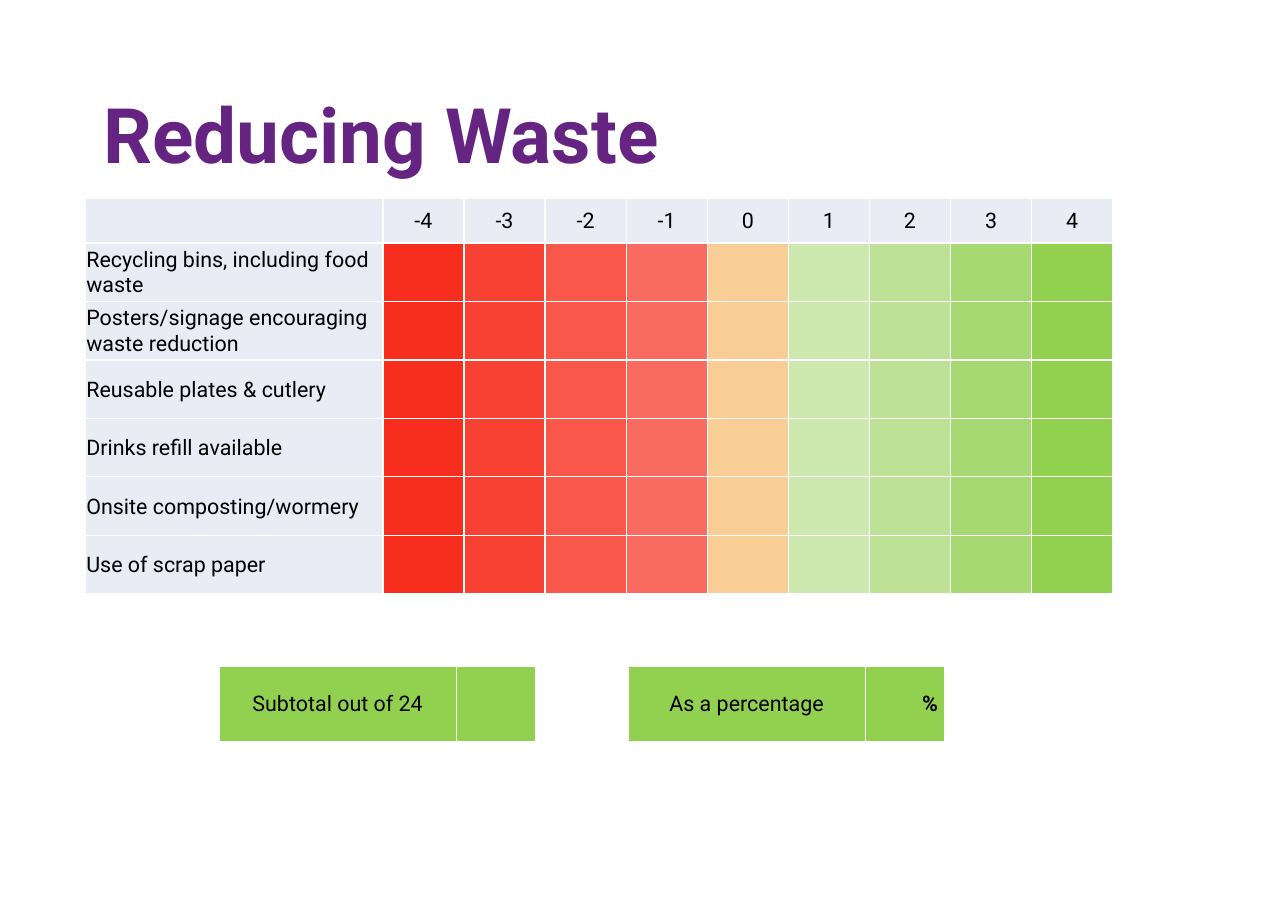
from pptx import Presentation
from pptx.dml.color import RGBColor
from pptx.enum.text import MSO_ANCHOR, MSO_AUTO_SIZE, PP_ALIGN
from pptx.oxml.ns import qn
from pptx.util import Cm, Pt
from lxml.etree import SubElement

FONT = "Roboto"
PURPLE = RGBColor(0x66, 0x24, 0x82)
BLACK = RGBColor(0x00, 0x00, 0x00)
WHITE = RGBColor(0xFF, 0xFF, 0xFF)
PALE_BLUE = RGBColor(0xE9, 0xEB, 0xF5)
RED = RGBColor(0xF7, 0x2D, 0x1D)
ORANGE = RGBColor(0xF2, 0x9E, 0x2E)
GREEN = RGBColor(0x92, 0xD0, 0x50)

# Score, colour and opacity in percent of each column
SCORES = [
    (-4, RED, 100), (-3, RED, 90), (-2, RED, 80), (-1, RED, 70),
    (0, ORANGE, 50),
    (1, GREEN, 45), (2, GREEN, 60), (3, GREEN, 80), (4, GREEN, 100),
]
CRITERIA = [
    "Recycling bins, including food waste",
    "Posters/signage encouraging waste reduction",
    "Reusable plates & cutlery",
    "Drinks refill available",
    "Onsite composting/wormery",
    "Use of scrap paper",
]


def set_font(font, size, color, bold=False):
    formats = {"name": FONT, "size": Pt(size), "bold": bold}
    for name, value in formats.items():
        setattr(font, name, value)
    font.color.rgb = color


def style_cell(cell, color, opacity=100):
    """Give the cell white borders and a fill, see-through below 100."""
    properties = cell._tc.get_or_add_tcPr()
    for side in ("a:lnL", "a:lnR", "a:lnT", "a:lnB"):
        line = SubElement(properties, qn(side), w=str(Pt(1)))
        fill = SubElement(line, qn("a:solidFill"))
        SubElement(fill, qn("a:srgbClr"), val=str(WHITE))
    cell.fill.solid()
    cell.fill.fore_color.rgb = color
    if opacity < 100:
        tint = properties.find(qn("a:solidFill")).find(qn("a:srgbClr"))
        SubElement(tint, qn("a:alpha"), val=str(opacity * 1000))


def write_cell(cell, text, align=PP_ALIGN.CENTER, bold=False, right=0.03):
    formats = {
        "vertical_anchor": MSO_ANCHOR.MIDDLE,
        "margin_left": Cm(0.03),
        "margin_right": Cm(right),
        "margin_top": Cm(0.03),
        "margin_bottom": Cm(0),
    }
    for name, value in formats.items():
        setattr(cell, name, value)
    paragraph = cell.text_frame.paragraphs[0]
    paragraph.alignment = align
    span = paragraph.add_run()
    span.text = text
    set_font(span.font, 14, BLACK, bold)


def add_grid(page, left, top, widths, heights):
    """Add an unbanded table with columns and rows sized in centimetres."""
    table = page.shapes.add_table(
        len(heights), len(widths), Cm(left), Cm(top),
        Cm(sum(widths)), Cm(sum(heights))).table
    table.first_row = table.horz_banding = False
    for column, width in zip(table.columns, widths):
        column.width = Cm(width)
    for row, height in zip(table.rows, heights):
        row.height = Cm(height)
    return table


def add_title(page, left, top, width, height):
    title = page.shapes.title
    box = {"left": left, "top": top, "width": width, "height": height}
    for name, value in box.items():
        setattr(title, name, Cm(value))
    frame = title.text_frame
    frame.auto_size = MSO_AUTO_SIZE.NONE
    frame.vertical_anchor = MSO_ANCHOR.BOTTOM
    paragraph = frame.paragraphs[0]
    paragraph.alignment = PP_ALIGN.LEFT
    paragraph.line_spacing = 0.9
    span = paragraph.add_run()
    span.text = "Reducing Waste"
    set_font(span.font, 50, PURPLE, bold=True)


def add_score_table(page, left, top, width, height):
    score_width, header_height = 1.87, 1.02
    blank_column = len(SCORES) + 1
    label_width = width - blank_column * score_width
    row_height = (height - header_height) / len(CRITERIA)
    table = add_grid(page, left, top,
                     [label_width] + [score_width] * blank_column,
                     [header_height] + [row_height] * len(CRITERIA))

    style_cell(table.cell(0, 0), PALE_BLUE)
    for row, criterion in enumerate(CRITERIA, 1):
        style_cell(table.cell(row, 0), PALE_BLUE)
        write_cell(table.cell(row, 0), criterion, PP_ALIGN.LEFT)
    for column, (score, color, opacity) in enumerate(SCORES, 1):
        style_cell(table.cell(0, column), PALE_BLUE)
        write_cell(table.cell(0, column), str(score))
        for row in range(1, len(CRITERIA) + 1):
            style_cell(table.cell(row, column), color, opacity)

    margin = table.cell(0, blank_column)
    margin.merge(table.cell(len(CRITERIA), blank_column))
    style_cell(margin, WHITE)


def add_result_table(page, left, top, width, height, label, unit=""):
    table = add_grid(page, left, top, [width / 4] * 4, [height])
    caption, result = table.cell(0, 0), table.cell(0, 3)
    caption.merge(table.cell(0, 2))
    for cell in (caption, result):
        style_cell(cell, GREEN)
    write_cell(caption, label)
    if unit:
        write_cell(result, unit, PP_ALIGN.RIGHT, bold=True, right=0.15)


def main():
    deck = Presentation()
    deck.slide_width, deck.slide_height = Cm(29.7), Cm(21)
    page = deck.slides.add_slide(deck.slide_layouts[5])
    add_title(page, 2.13, 1.93, 25.25, 2.34)
    add_score_table(page, 1.96, 4.57, 25.57, 9.11)
    add_result_table(page, 5.05, 15.35, 7.3, 1.75, "Subtotal out of 24")
    add_result_table(page, 14.48, 15.35, 7.3, 1.75, "As a percentage", "%")
    deck.save("out.pptx")


if __name__ == "__main__":
    main()
